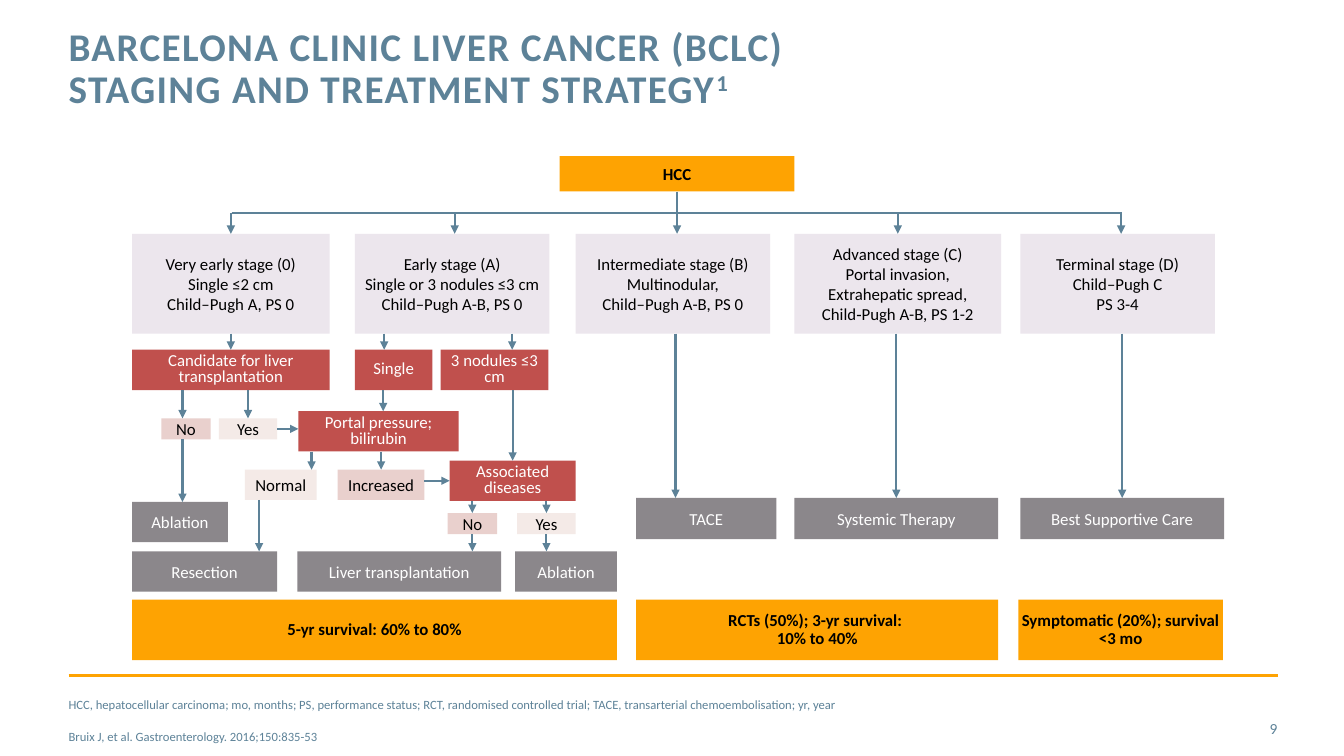
from dataclasses import dataclass
from typing import NamedTuple, Optional

from lxml.etree import SubElement
from pptx import Presentation
from pptx.dml.color import RGBColor
from pptx.enum.shapes import MSO_CONNECTOR as Conn, MSO_SHAPE as Shape
from pptx.enum.text import MSO_ANCHOR as Anchor, MSO_AUTO_SIZE as AutoSize, PP_ALIGN as Align
from pptx.oxml.ns import qn
from pptx.util import Inches, Pt

FONT = "Calibri"
SLATE = RGBColor(0x5D, 0x82, 0x98)
ORANGE = RGBColor(0xFE, 0xA3, 0x02)
LILAC = RGBColor(0xEC, 0xE6, 0xED)
RED = RGBColor(0xC0, 0x50, 0x4D)
ROSE = RGBColor(0xE9, 0xD0, 0xCD)
BLUSH = RGBColor(0xF4, 0xEA, 0xE7)
GREY = RGBColor(0x8B, 0x87, 0x8B)
BLACK = RGBColor(0, 0, 0)
WHITE = RGBColor(0xFF, 0xFF, 0xFF)


class Span(NamedTuple):
    """Start and size, in inches, of a grid row or column."""
    start: float
    size: float

    @property
    def middle(self) -> float:
        return self.start + self.size / 2

    @property
    def end(self) -> float:
        return self.start + self.size


class Style(NamedTuple):
    fill: RGBColor
    ink: RGBColor = BLACK
    bold: bool = False
    spacing: float = 1.0


ROOT = Style(ORANGE, bold=True)
STAGE = Style(LILAC)
TEST = Style(RED, WHITE, spacing=0.8)
NO = Style(ROSE)
YES = Style(BLUSH)
THERAPY = Style(GREY, WHITE)
OUTCOME = Style(ORANGE, bold=True, spacing=0.9)

# Rows of the flow chart, top to bottom
ROOT_ROW = Span(1.55, 0.35)
BUS_Y = 2.11
STAGE_ROW = Span(2.32, 0.99)
TEST_ROW = Span(3.47, 0.4)
ANSWER_ROW = Span(4.15, 0.21)
PORTAL_ROW = Span(4.08, 0.4)
LEVEL_ROW = Span(4.66, 0.3)
DISEASE_ROW = Span(4.57, 0.4)
ANSWER_ROW_2 = Span(5.09, 0.21)
ABLATION_ROW = Span(4.98, 0.4)
LATE_ROW = Span(4.94, 0.41)
EARLY_ROW = Span(5.47, 0.4)
OUTCOME_ROW = Span(5.95, 0.6)

# Columns shared by several boxes
FIRST_COL = Span(1.31, 1.96)
LAST_COL = Span(10.12, 2.02)
PAGE_COL = Span(0.68, 12.0)


@dataclass(frozen=True)
class Box:
    """In text, a new line starts a paragraph and a vertical tab breaks a line."""
    key: str
    text: str
    col: Span
    row: Span
    style: Style
    side_inset: float = 0.1
    wrap: bool = True


@dataclass(frozen=True)
class Link:
    """Arrow at a fixed x (or y if sideways); without a source it leaves the bus."""
    source: Optional[str]
    target: str
    place: float
    sideways: bool = False


BOXES = [
    Box("hcc", "HCC", Span(5.55, 2.33), ROOT_ROW, ROOT),
    Box("0", "Very early stage (0)\nSingle ≤2 cm\nChild–Pugh A, PS 0", FIRST_COL, STAGE_ROW, STAGE),
    Box("A", "Early stage (A)\nSingle or 3 nodules ≤3 cm\nChild–Pugh A-B, PS 0",
        Span(3.52, 1.93), STAGE_ROW, STAGE, side_inset=0),
    Box("B", "Intermediate stage (B)\nMultinodular,\nChild–Pugh A-B, PS 0", Span(5.71, 1.93), STAGE_ROW, STAGE),
    Box("C", "Advanced stage (C)\nPortal invasion, Extrahepatic spread, Child‑Pugh A-B, PS 1-2",
        Span(7.88, 2.05), STAGE_ROW, STAGE),
    Box("D", "Terminal stage (D)\nChild–Pugh C\nPS 3-4", Span(10.12, 1.93), STAGE_ROW, STAGE),
    Box("candidate", "Candidate for liver transplantation", FIRST_COL, TEST_ROW, TEST),
    Box("single", "Single", Span(3.52, 0.77), TEST_ROW, TEST),
    Box("nodules", "3 nodules ≤3 cm", Span(4.37, 1.07), TEST_ROW, TEST),
    Box("portal", "Portal pressure; bilirubin", Span(2.96, 1.59), PORTAL_ROW, TEST),
    Box("diseases", "Associated\vdiseases", Span(4.46, 1.25), DISEASE_ROW, TEST),
    Box("no", "No", Span(1.6, 0.49), ANSWER_ROW, NO),
    Box("yes", "Yes", Span(2.17, 0.58), ANSWER_ROW, YES),
    Box("normal", "Normal", Span(2.43, 0.71), LEVEL_ROW, YES, wrap=False),
    Box("increased", "Increased", Span(3.35, 0.86), LEVEL_ROW, NO, wrap=False),
    Box("no 2", "No", Span(4.44, 0.49), ANSWER_ROW_2, NO),
    Box("yes 2", "Yes", Span(5.13, 0.58), ANSWER_ROW_2, YES),
    Box("ablation", "Ablation", Span(1.31, 0.95), ABLATION_ROW, THERAPY),
    Box("resection", "Resection", Span(1.31, 1.44), EARLY_ROW, THERAPY),
    Box("transplant", "Liver transplantation", Span(2.95, 2.02), EARLY_ROW, THERAPY),
    Box("ablation 2", "Ablation", Span(5.11, 1.01), EARLY_ROW, THERAPY),
    Box("tace", "TACE", Span(6.31, 1.39), LATE_ROW, THERAPY),
    Box("systemic", "Systemic Therapy", Span(7.88, 2.02), LATE_ROW, THERAPY),
    Box("supportive", "Best Supportive Care", LAST_COL, LATE_ROW, THERAPY),
    Box("early outcome", "5-yr survival: 60% to 80%", Span(1.31, 4.81), OUTCOME_ROW, OUTCOME),
    Box("late outcome", "RCTs (50%); 3-yr survival: \v10% to 40%", Span(6.31, 3.59), OUTCOME_ROW, OUTCOME),
    Box("last outcome", "Symptomatic (20%); survival <3 mo", Span(10.1, 2.03), OUTCOME_ROW, OUTCOME, side_inset=0),
]

LINKS = [
    Link("hcc", "B", 6.7),
    Link(None, "0", 2.3), Link(None, "A", 4.51), Link(None, "C", 8.89), Link(None, "D", 11.12),
    Link("0", "candidate", 2.3), Link("A", "single", 3.81), Link("A", "nodules", 5.08),
    Link("candidate", "no", 1.81), Link("candidate", "yes", 2.47),
    Link("yes", "portal", 4.26, sideways=True), Link("single", "portal", 3.8),
    Link("nodules", "diseases", 5.09), Link("portal", "normal", 3.09),
    Link("portal", "increased", 3.8), Link("increased", "diseases", 4.79, sideways=True),
    Link("no", "ablation", 1.81), Link("normal", "resection", 2.57),
    Link("diseases", "no 2", 4.69), Link("diseases", "yes 2", 5.42),
    Link("no 2", "transplant", 4.67), Link("yes 2", "ablation 2", 5.42),
    Link("B", "tace", 6.7), Link("C", "systemic", 8.89), Link("D", "supportive", 11.12),
]


def add_run(p, text: str, size: float, color: RGBColor, bold: bool = False):
    r = p.add_run()
    r.text = text
    r.font.name, r.font.size, r.font.bold = FONT, Pt(size), bold
    r.font.color.rgb = color
    return r


def set_frame(tf, anchor, side: float = 0, edge: float = 0, wrap: bool = True) -> None:
    tf.auto_size, tf.word_wrap, tf.vertical_anchor = AutoSize.NONE, wrap, anchor
    tf.margin_left = tf.margin_right = Inches(side)
    tf.margin_top = tf.margin_bottom = Inches(edge)


def place(sp, col: Span, row: Span) -> None:
    sp.left, sp.top, sp.width, sp.height = map(Inches, (col.start, row.start, col.size, row.size))


def draw_box(shapes, box: Box):
    sp = shapes.add_shape(Shape.RECTANGLE, 0, 0, 0, 0)
    place(sp, box.col, box.row)
    sp.shadow.inherit = False
    sp.fill.solid()
    sp.fill.fore_color.rgb = box.style.fill
    sp.line.fill.background()
    tf = sp.text_frame
    set_frame(tf, Anchor.MIDDLE, box.side_inset, 0.05, box.wrap)
    for i, paragraph in enumerate(box.text.split("\n")):
        p = tf.add_paragraph() if i else tf.paragraphs[0]
        p.alignment, p.line_spacing = Align.CENTER, box.style.spacing
        for j, line in enumerate(paragraph.split("\v")):
            if j:
                p.add_line_break()
            add_run(p, line, 12, box.style.ink, box.style.bold)
    return sp


def draw_line(shapes, start, end, color=SLATE, width=1.5, arrow=False):
    cx = shapes.add_connector(Conn.STRAIGHT, *map(Inches, (*start, *end)))
    cx.line.color.rgb, cx.line.width = color, Pt(width)
    if arrow:
        SubElement(cx.line._get_or_add_ln(), qn("a:tailEnd"), type="triangle")
    SubElement(cx._element.spPr, qn("a:effectLst"))
    return cx


def draw_link(shapes, link: Link, boxes: dict, drawn: dict) -> None:
    """Draw the arrow, snapped and joined to a side's middle where it is close."""
    source, target = boxes.get(link.source), boxes[link.target]
    along, across = ("col", "row") if link.sideways else ("row", "col")
    middles = {b.key: getattr(b, across).middle for b in (source, target) if b}
    nearest = min(middles.values(), key=lambda m: abs(m - link.place))
    cross = nearest if abs(nearest - link.place) < 0.022 else link.place
    first = getattr(source, along).end if source else BUS_Y
    last = getattr(target, along).start
    ends = [(first, cross), (last, cross)] if link.sideways else [(cross, first), (cross, last)]
    cx = draw_line(shapes, *ends, arrow=True)
    if source and abs(middles[source.key] - cross) < 0.01:
        cx.begin_connect(drawn[source.key], 3 if link.sideways else 2)
    if abs(middles[target.key] - cross) < 0.01:
        cx.end_connect(drawn[target.key], 1 if link.sideways else 0)


def write_title(sp) -> None:
    place(sp, Span(PAGE_COL.start, 9.56), Span(0.27, 0.88))
    set_frame(sp.text_frame, Anchor.TOP)
    p = sp.text_frame.paragraphs[0]
    p.alignment, p.line_spacing = Align.LEFT, Pt(30)
    lines = [add_run(p, "BARCELONA CLINIC LIVER CANCER (BCLC)", 28, SLATE, True)]
    p.add_line_break()
    lines.append(add_run(p, "STAGING AND TREATMENT STRATEGY", 28, SLATE, True))
    lines.append(add_run(p, "1", 28, SLATE, True))
    for r in lines:
        r.font._element.set("spc", "100")
    lines[-1].font._element.set("baseline", "30000")


def write_footer(sp) -> None:
    place(sp, Span(PAGE_COL.start, 11.6), Span(6.95, 0.4))
    set_frame(sp.text_frame, Anchor.MIDDLE)
    notes = ["HCC, hepatocellular carcinoma; mo, months; PS, performance status; RCT, randomised controlled trial; "
             "TACE, transarterial chemoembolisation; yr, year",
             "Bruix J, et al. Gastroenterology. 2016;150:835-53"]
    for i, note in enumerate(notes):
        p = sp.text_frame.add_paragraph() if i else sp.text_frame.paragraphs[0]
        p.alignment, p.space_before = Align.LEFT, Pt(12 if i else 0)
        add_run(p, note, 9, SLATE)


def main() -> None:
    prs = Presentation()
    prs.slide_width, prs.slide_height = Inches(13.33), Inches(7.5)
    slide = prs.slides.add_slide(prs.slide_layouts.get_by_name("Section Header"))
    shapes = slide.shapes
    write_title(shapes.title)
    write_footer(slide.placeholders[1])
    draw_line(shapes, (PAGE_COL.start, 6.7), (PAGE_COL.end, 6.7), ORANGE, 2)
    drawn = {box.key: draw_box(shapes, box) for box in BOXES}
    draw_line(shapes, (2.3, BUS_Y), (11.13, BUS_Y))
    for link in LINKS:
        draw_link(shapes, link, {box.key: box for box in BOXES}, drawn)
    number = shapes.add_textbox(0, 0, 0, 0)
    place(number, Span(11.81, 0.86), Span(7.03, 0.4))
    set_frame(number.text_frame, Anchor.MIDDLE)
    p = number.text_frame.paragraphs[0]
    p.alignment = Align.RIGHT
    add_run(p, "9", 11, SLATE)
    prs.save("out.pptx")


if __name__ == "__main__":
    main()
